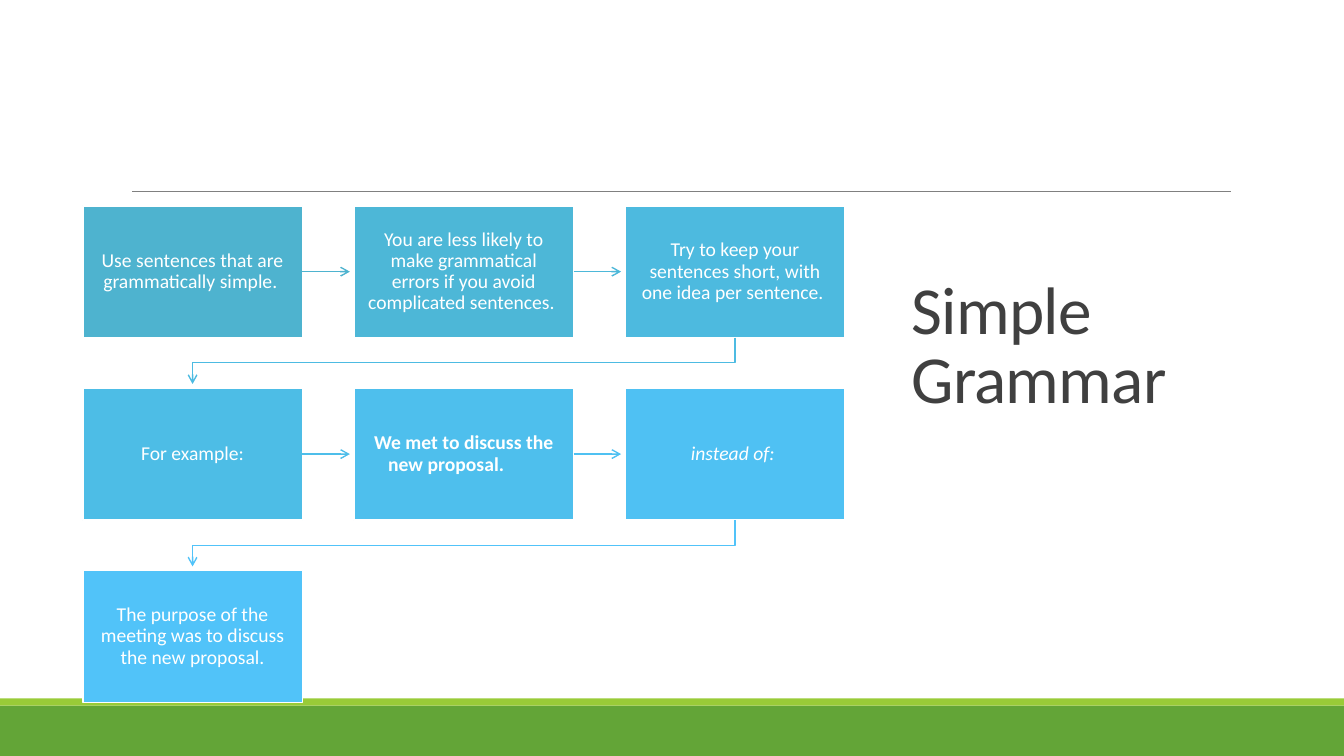
from lxml import etree
from pptx import Presentation
from pptx.dml.color import RGBColor
from pptx.enum.shapes import MSO_CONNECTOR, MSO_SHAPE
from pptx.enum.text import MSO_ANCHOR, MSO_AUTO_SIZE, PP_ALIGN
from pptx.oxml.ns import qn
from pptx.util import Inches, Pt

RECTANGLE = MSO_SHAPE.RECTANGLE
STRAIGHT = MSO_CONNECTOR.STRAIGHT
MIDDLE = MSO_ANCHOR.MIDDLE
CENTER, LEFT = PP_ALIGN.CENTER, PP_ALIGN.LEFT
NO_AUTOFIT = MSO_AUTO_SIZE.NONE
RIGHT_SIDE = 3

FONT = "Calibri"
COLORS = {
    "band": "63A537",
    "stripe": "99CB38",
    "rule": "808080",
    "title": "404040",
    "white": "FFFFFF",
}

# Step grid, in inches
COLUMNS = 3
GRID_LEFT, GRID_TOP = 0.82, 2.04
STEP_WIDTH, STEP_HEIGHT = 2.18, 1.31
COLUMN_PITCH, ROW_PITCH = 2.69, 1.81
ARROW_GAP = 0.04

# Text, box colour, colour of the arrow to the next step, font format
STEPS = [
    ("Use sentences that are grammatically simple. ", "4EB3CF", "4EB3CF", {}),
    ("You are less likely to make grammatical errors if you avoid "
     "complicated sentences. ", "4DB7D7", "4DB8D9", {}),
    ("Try to keep your sentences short, with one idea per sentence. ",
     "4DBADF", "4DBBE2", {}),
    ("For example:", "4DBDE6", "4EBEEA", {}),
    ("We met to discuss the new proposal.\t", "4EBFED", "4FC1F2", {"bold": True}),
    ("instead of: ", "4FC1F3", "51C3F9", {"italic": True}),
    ("The purpose of the meeting was to discuss the new proposal.",
     "51C3F9", None, {}),
]


def set_format(target, values):
    for name, value in values.items():
        setattr(target, name, value)


def style_font(font, size, color, **extra):
    set_format(font, {"name": FONT, "size": Pt(size), **extra})
    font.color.rgb = RGBColor.from_string(color)


def style_line(line, color, width):
    line.color.rgb = RGBColor.from_string(color)
    line.width = Pt(width)


def add_arrowhead(line_shape):
    outline = line_shape.line._get_or_add_ln()
    etree.SubElement(outline, qn("a:tailEnd"), type="arrow")


def add_block(slide, left, top, width, height, color):
    block = slide.shapes.add_shape(
        RECTANGLE, Inches(left), Inches(top), Inches(width), Inches(height))
    block.shadow.inherit = False
    block.fill.solid()
    block.fill.fore_color.rgb = RGBColor.from_string(color)
    block.line.fill.background()
    return block


def add_straight(slide, x1, y1, x2, y2, color, width):
    straight = slide.shapes.add_connector(
        STRAIGHT, Inches(x1), Inches(y1), Inches(x2), Inches(y2))
    style_line(straight.line, color, width)
    etree.SubElement(straight._element.spPr, qn("a:effectLst"))
    return straight


def add_title(slide, text):
    title = slide.shapes.title
    set_format(title, {"left": Inches(8.94), "top": Inches(0.69),
                       "width": Inches(3.69), "height": Inches(5.53)})
    frame = title.text_frame
    frame.text = text
    set_format(frame, {"word_wrap": True, "auto_size": NO_AUTOFIT,
                       "vertical_anchor": MIDDLE})
    paragraph = frame.paragraphs[0]
    set_format(paragraph, {"alignment": LEFT, "line_spacing": 0.85})
    run = paragraph.runs[0]
    style_font(run.font, 48, COLORS["title"])
    run._r.get_or_add_rPr().set("spc", "-50")


def step_position(index):
    row, column = divmod(index, COLUMNS)
    return GRID_LEFT + column * COLUMN_PITCH, GRID_TOP + row * ROW_PITCH


def add_step(slide, index, text, color, font_format):
    left, top = step_position(index)
    step = add_block(slide, left, top, STEP_WIDTH, STEP_HEIGHT, color)
    style_line(step.line, COLORS["white"], 1.25)
    frame = step.text_frame
    inset = Inches(0.11)
    set_format(frame, {"word_wrap": True, "vertical_anchor": MIDDLE,
                       "margin_left": inset, "margin_right": inset,
                       "margin_top": inset, "margin_bottom": inset})
    frame.text = text
    paragraph = frame.paragraphs[0]
    set_format(paragraph, {"alignment": CENTER, "line_spacing": 0.9})
    style_font(paragraph.runs[0].font, 14, COLORS["white"], **font_format)
    return step


def add_row_arrow(slide, index, step, color):
    left, top = step_position(index)
    middle = top + STEP_HEIGHT / 2
    arrow = add_straight(slide, left + STEP_WIDTH, middle,
                         left + COLUMN_PITCH - ARROW_GAP, middle, color, 1)
    arrow.begin_connect(step, RIGHT_SIDE)
    add_arrowhead(arrow)


def add_return_arrow(slide, index, color):
    left, top = step_position(index)
    next_left, next_top = step_position(index + 1)
    start_x, end_x = left + STEP_WIDTH / 2, next_left + STEP_WIDTH / 2
    start_y = top + STEP_HEIGHT
    turn_y = (start_y + next_top) / 2
    bends = [(start_x, turn_y), (end_x, turn_y), (end_x, next_top - ARROW_GAP)]
    route = slide.shapes.build_freeform(Inches(start_x), Inches(start_y))
    route.add_line_segments([(Inches(x), Inches(y)) for x, y in bends], close=False)
    arrow = route.convert_to_shape()
    arrow.shadow.inherit = False
    arrow.fill.background()
    style_line(arrow.line, color, 1)
    add_arrowhead(arrow)


def main():
    prs = Presentation()
    prs.slide_width, prs.slide_height = Inches(13.33), Inches(7.5)
    slide = prs.slides.add_slide(prs.slide_layouts[5])

    # Footer bands and rule
    add_block(slide, 0, 7, 13.33, 0.5, COLORS["band"])
    add_block(slide, 0, 6.93, 13.33, 0.07, COLORS["stripe"])
    add_straight(slide, 1.31, 1.9, 12.21, 1.9, COLORS["rule"], 0.5)

    add_title(slide, "Simple Grammar")

    # Steps, each with the arrow that leads on from it
    for index, (text, color, arrow_color, font_format) in enumerate(STEPS):
        step = add_step(slide, index, text, color, font_format)
        if arrow_color is None:
            continue
        if index % COLUMNS == COLUMNS - 1:
            add_return_arrow(slide, index, arrow_color)
        else:
            add_row_arrow(slide, index, step, arrow_color)

    prs.save("out.pptx")


if __name__ == "__main__":
    main()
